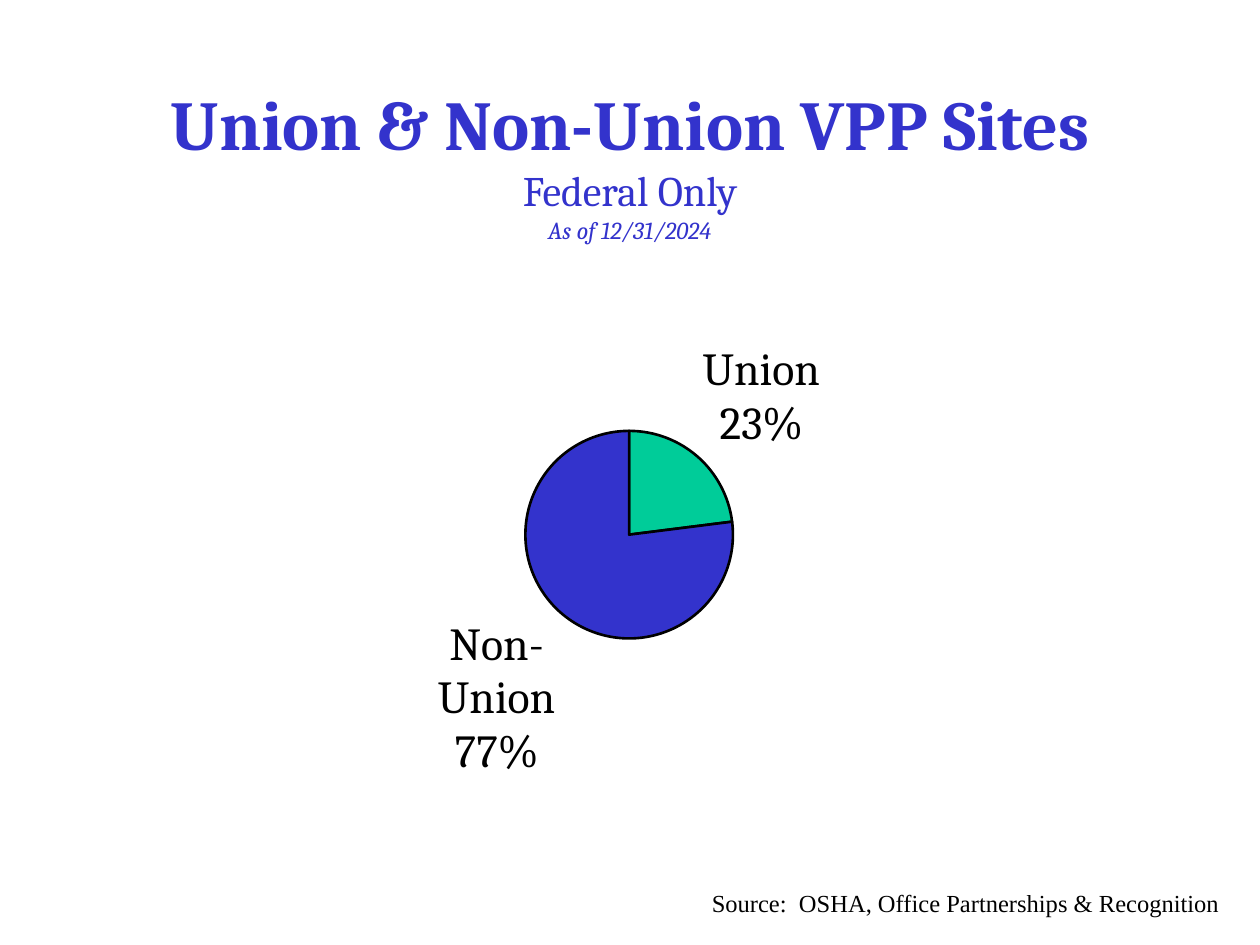
from lxml.etree import SubElement
from pptx import Presentation
from pptx.chart.data import CategoryChartData
from pptx.dml.color import RGBColor
from pptx.enum.chart import XL_CHART_TYPE, XL_LABEL_POSITION
from pptx.enum.text import MSO_ANCHOR, MSO_AUTO_SIZE, PP_ALIGN
from pptx.oxml.ns import qn
from pptx.util import Cm, Pt

COLORS = {"blue": "3333CC", "green": "00CC99", "black": "000000"}
HEAD_FONT = "Cambria"


def rgb(name):
    return RGBColor.from_string(COLORS[name])


def add_title(slide, x, y, w, h):
    """Title placeholder: heading, scope and date on three lines."""
    sp = slide.shapes.title
    sp.left, sp.top, sp.width, sp.height = Cm(x), Cm(y), Cm(w), Cm(h)
    tf = sp.text_frame
    tf.auto_size = MSO_AUTO_SIZE.NONE
    tf.vertical_anchor = MSO_ANCHOR.MIDDLE
    p = tf.paragraphs[0]
    p.alignment = PP_ALIGN.CENTER
    lines = [
        ("Union & Non-Union VPP Sites", 40, True, False),
        ("Federal Only", 24, False, False),
        ("As of 12/31/2024", 14, False, True),
    ]
    for i, (text, size, bold, italic) in enumerate(lines):
        if i:
            p.add_line_break()
        r = p.add_run()
        r.text = text
        r.font.name = HEAD_FONT
        r.font.size = Pt(size)
        r.font.bold, r.font.italic = bold, italic
        r.font.color.rgb = rgb("blue")


def set_plot_area(chart, x, y, w, h):
    """Fix the inner plot area, in fractions of the chart."""
    plot_area = chart._chartSpace.chart.plotArea
    for old in plot_area.findall(qn("c:layout")):
        plot_area.remove(old)
    layout = SubElement(plot_area, qn("c:layout"))
    plot_area.insert(0, layout)
    manual = SubElement(layout, qn("c:manualLayout"))
    settings = {"layoutTarget": "inner", "xMode": "edge", "yMode": "edge",
                "x": x, "y": y, "w": w, "h": h}
    for tag, val in settings.items():
        SubElement(manual, qn(f"c:{tag}")).set("val", str(val))


def add_pie(slide, x, y, w, h):
    """Pie of union and non-union shares, labelled outside."""
    data = CategoryChartData()
    data.categories = ["Union", "Non-Union"]
    data.add_series("Series 1", (23, 77))
    chart = slide.shapes.add_chart(
        XL_CHART_TYPE.PIE, Cm(x), Cm(y), Cm(w), Cm(h), data).chart
    chart.has_legend = False
    chart.has_title = False
    chart.font.name = HEAD_FONT
    chart.font.size = Pt(26.2)
    chart.font.bold = False
    chart.font.color.rgb = rgb("black")
    set_plot_area(chart, 0.31, 0.34, 0.38, 0.32)

    # Slices
    plot = chart.plots[0]
    plot.vary_by_categories = True
    for i, color in enumerate(("green", "blue")):
        fmt = plot.series[0].points[i].format
        fmt.fill.solid()
        fmt.fill.fore_color.rgb = rgb(color)
        fmt.line.color.rgb = rgb("black")
        fmt.line.width = Pt(1.5)

    # Labels: category above percentage
    plot.has_data_labels = True
    labels = plot.data_labels
    labels.show_category_name = True
    labels.show_percentage = True
    labels.show_value = False
    labels.number_format = "0%"
    labels.number_format_is_linked = False
    labels.position = XL_LABEL_POSITION.OUTSIDE_END
    separator = SubElement(labels._element, qn("c:separator"))
    separator.text = "\n"
    labels._element.find(qn("c:showBubbleSize")).addnext(separator)


def add_source(slide, x, y, w, h):
    """Source line at the lower right."""
    tf = slide.shapes.add_textbox(Cm(x), Cm(y), Cm(w), Cm(h)).text_frame
    tf.word_wrap = False
    tf.vertical_anchor = MSO_ANCHOR.BOTTOM
    p = tf.paragraphs[0]
    p.text = "Source:  OSHA, Office Partnerships & Recognition"
    p.font.name = "Times New Roman"
    p.font.size = Pt(14)
    p.font.color.rgb = rgb("black")


def main():
    prs = Presentation()
    prs.slide_width, prs.slide_height = Cm(25.4), Cm(19.05)
    s = prs.slides.add_slide(prs.slide_layouts[5])
    add_title(s, 1.9, 1.47, 21.6, 3.6)
    add_pie(s, 5.05, 4.24, 15.27, 13.08)
    add_source(s, 14.1, 17.35, 10.95, 1.27)
    prs.save("out.pptx")


if __name__ == "__main__":
    main()
